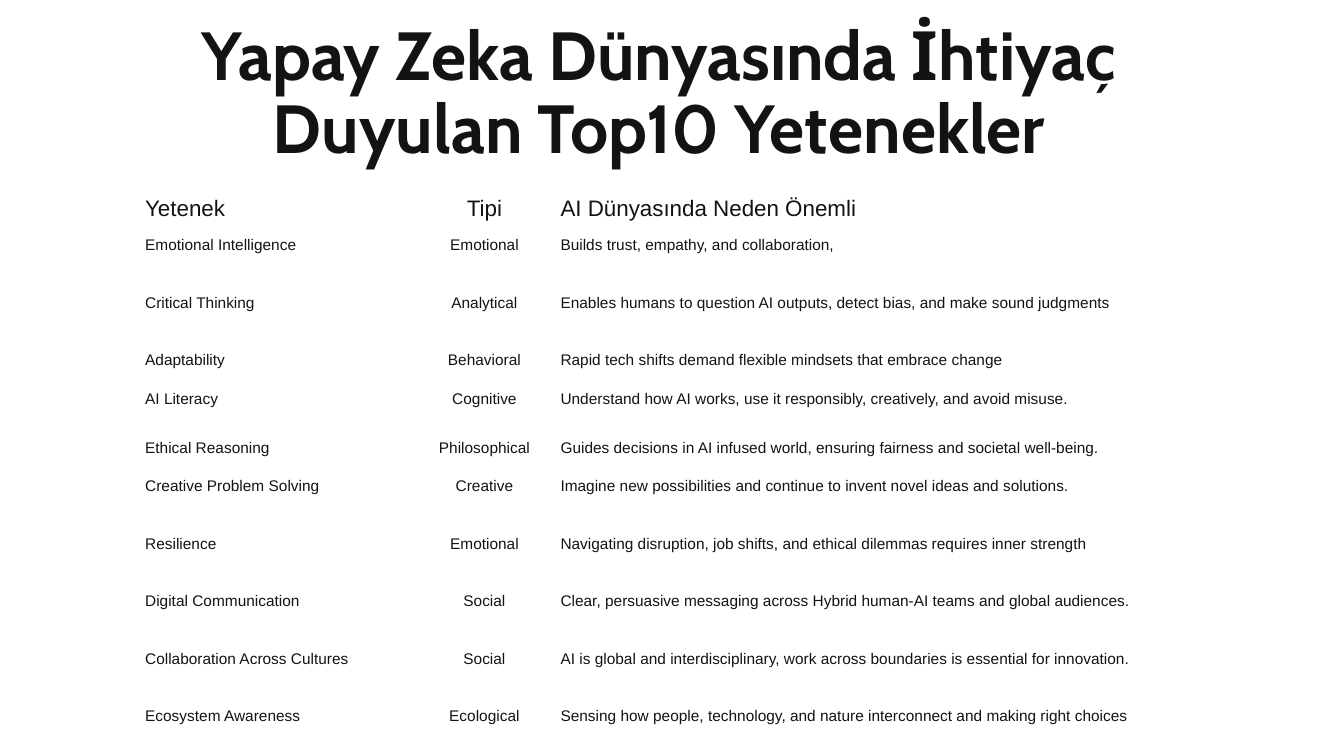
from lxml.etree import SubElement
from pptx import Presentation
from pptx.dml.color import RGBColor
from pptx.enum.text import MSO_ANCHOR, MSO_AUTO_SIZE, PP_ALIGN
from pptx.oxml.ns import qn
from pptx.util import Inches, Pt

INK = RGBColor(0x13, 0x13, 0x13)
WHITE = RGBColor(0xFF, 0xFF, 0xFF)

COLUMN_WIDTHS = [2.75, 1.37, 6.96]
ALIGNMENTS = [PP_ALIGN.LEFT, PP_ALIGN.CENTER, PP_ALIGN.LEFT]

# Row height in inches, then skill, type and importance
SKILLS = [
    (0.41, "Yetenek", "Tipi", "AI Dünyasında Neden Önemli"),
    (0.57, "Emotional Intelligence", "Emotional",
     "Builds trust, empathy, and collaboration,"),
    (0.57, "Critical Thinking", "Analytical",
     "Enables humans to question AI outputs, detect bias, and make sound judgments"),
    (0.38, "Adaptability", "Behavioral",
     "Rapid tech shifts demand flexible mindsets that embrace change"),
    (0.49, "AI Literacy", "Cognitive",
     "Understand how AI works, use it responsibly, creatively, and avoid misuse."),
    (0.38, "Ethical Reasoning", "Philosophical",
     "Guides decisions in AI infused world, ensuring fairness and societal well-being."),
    (0.57, "Creative Problem Solving", "Creative",
     "Imagine new possibilities and continue to invent novel ideas and solutions."),
    (0.57, "Resilience", "Emotional",
     "Navigating disruption, job shifts, and ethical dilemmas requires inner strength"),
    (0.57, "Digital Communication", "Social",
     "Clear, persuasive messaging across Hybrid human-AI teams and global audiences."),
    (0.57, "Collaboration Across Cultures", "Social",
     "AI is global and interdisciplinary, work across boundaries is essential for innovation."),
    (0.57, "Ecosystem Awareness", "Ecological",
     "Sensing how people, technology, and nature interconnect and making right choices"),
]


def format_text(paragraph, font_name, size, alignment, line_spacing):
    paragraph.alignment = alignment
    paragraph.line_spacing = line_spacing
    font = paragraph.runs[0].font
    font.name = font_name
    font.size = Pt(size)
    font.color.rgb = INK


def set_borders(cell, bottom_width):
    properties = cell._tc.get_or_add_tcPr()
    for side, width in (("L", 1), ("R", 1), ("T", 1), ("B", bottom_width)):
        line = SubElement(properties, qn(f"a:ln{side}"), w=str(Pt(width)))
        fill = SubElement(line, qn("a:solidFill"))
        SubElement(fill, qn("a:srgbClr"), val=str(WHITE))


presentation = Presentation()
presentation.slide_width = Inches(13.33)
presentation.slide_height = Inches(7.5)
slide = presentation.slides.add_slide(presentation.slide_layouts[5])
slide.background.fill.solid()
slide.background.fill.fore_color.rgb = WHITE

# Title
title = slide.shapes.title
title.left, title.top = Inches(0.71), Inches(0.66)
title.width, title.height = Inches(11.65), Inches(1.06)
title_frame = title.text_frame
title_frame.text = "Yapay Zeka Dünyasında İhtiyaç Duyulan Top10 Yetenekler"
title_frame.word_wrap = True
title_frame.auto_size = MSO_AUTO_SIZE.NONE
title_frame.vertical_anchor = MSO_ANCHOR.BOTTOM
format_text(title_frame.paragraphs[0], "Cabin", 48.6, PP_ALIGN.CENTER, 0.9)
title_frame.paragraphs[0].runs[0].font.bold = True

# Skills table
table = slide.shapes.add_table(
    len(SKILLS), len(COLUMN_WIDTHS), Inches(1.37), Inches(1.93),
    Inches(sum(COLUMN_WIDTHS)), Inches(sum(skill[0] for skill in SKILLS))).table
table.horz_banding = False
for column, width in zip(table.columns, COLUMN_WIDTHS):
    column.width = Inches(width)

for row_index, (height, *texts) in enumerate(SKILLS):
    is_header = row_index == 0
    table.rows[row_index].height = Inches(height)
    for column_index, text in enumerate(texts):
        cell = table.cell(row_index, column_index)
        cell.text_frame.text = text
        cell.margin_left = cell.margin_right = Inches(0.07)
        cell.margin_top = cell.margin_bottom = 0
        cell.vertical_anchor = MSO_ANCHOR.TOP
        paragraph = cell.text_frame.paragraphs[0]
        format_text(paragraph, "Arial", 16 if is_header else 11,
                    ALIGNMENTS[column_index], 1.07)
        paragraph.space_before = paragraph.space_after = Pt(2)
        paragraph.runs[0].font.bold = False
        set_borders(cell, 3 if is_header else 1)
        cell.fill.background()

presentation.save("out.pptx")
